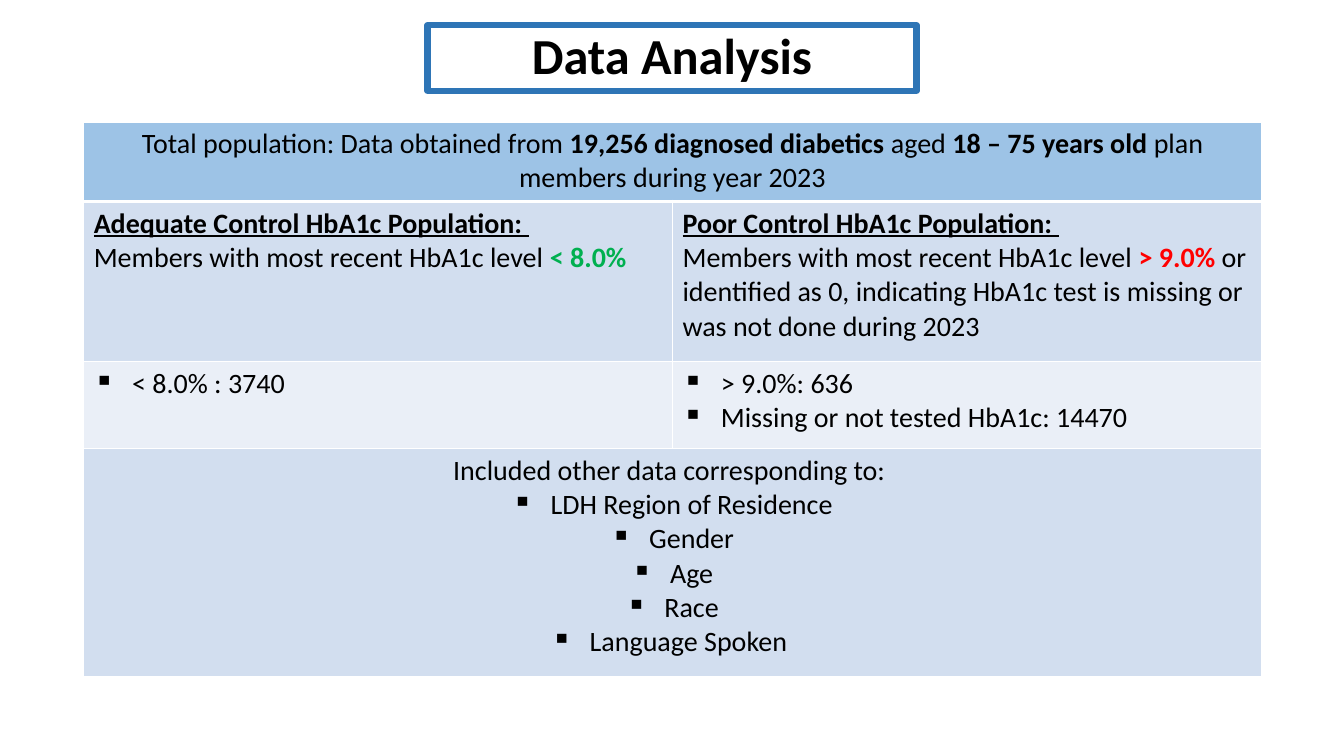
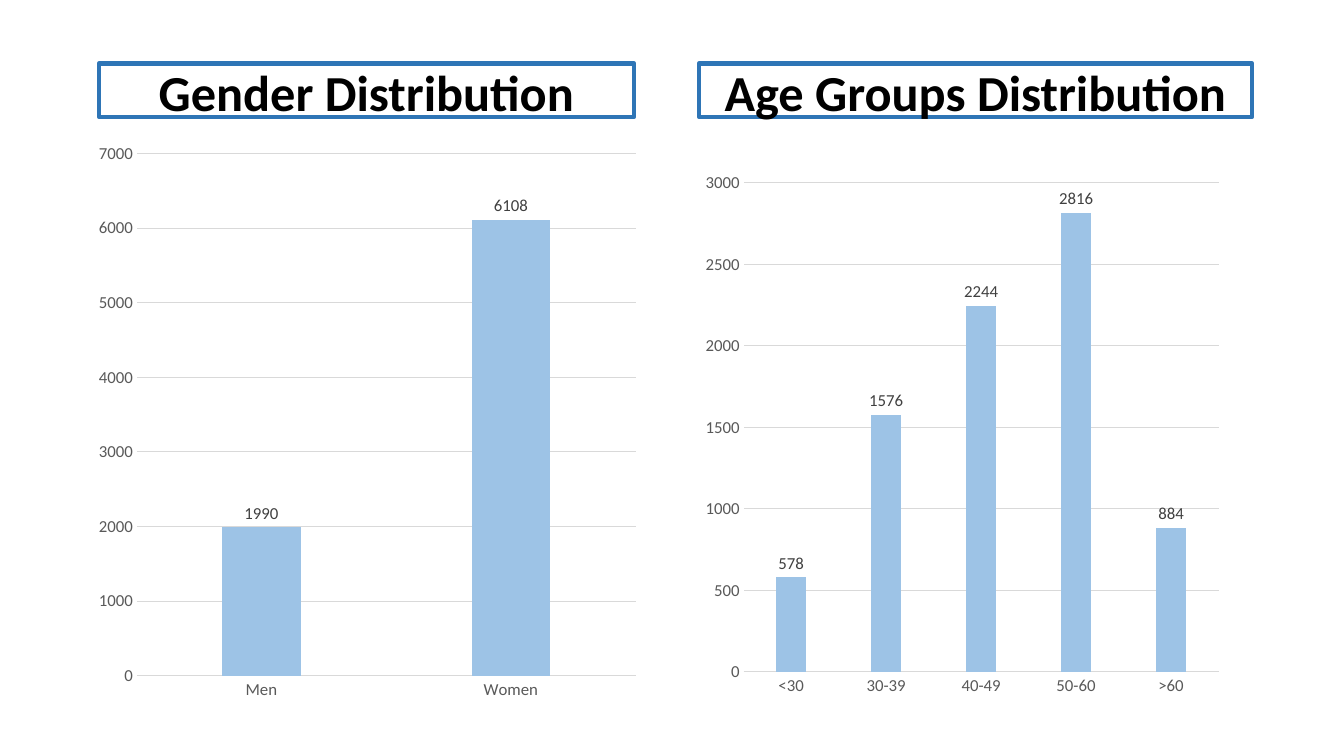
import pptx
import pptx.chart.data
import pptx.dml.color
import pptx.enum.chart
import pptx.enum.shapes
import pptx.enum.text
import pptx.oxml
import pptx.oxml.ns
import pptx.util
from pptx.util import Inches
from lxml import etree

RGB = pptx.dml.color.RGBColor.from_string
Pt = pptx.util.Pt
qn = pptx.oxml.ns.qn
CENTER = pptx.enum.text.PP_ALIGN.CENTER
LEFT = pptx.enum.text.PP_ALIGN.LEFT
TOP = pptx.enum.text.MSO_ANCHOR.TOP
MIDDLE = pptx.enum.text.MSO_ANCHOR.MIDDLE

THEME = {
    "font": "Calibri", "title": 36, "body": 20, "chart": 12,
    "text": "000000", "frame": "2E75B6", "accent": "9DC3E6",
    "band": "D2DEEF", "light": "EAEFF7", "border": "FFFFFF",
    "good": "00B050", "bad": "FF0000",
    "axis": "595959", "label": "404040", "grid": "D9D9D9",
}


def style_font(font, size, color, bold=False, underline=False):
    font.name, font.size = THEME["font"], Pt(size)
    font.color.rgb = RGB(THEME[color])
    font.bold, font.underline = bold, underline


def add_title(slide, text, box, line_width, anchor):
    s = slide.shapes.add_shape(pptx.enum.shapes.MSO_SHAPE.RECTANGLE, *map(Inches, box))
    s.shadow.inherit = False
    s.fill.background()
    s.line.color.rgb = RGB(THEME["frame"])
    s.line.width = Pt(line_width)
    etree.SubElement(s._element.spPr.find(qn("a:ln")), qn("a:round"))
    tf = s.text_frame
    tf.word_wrap, tf.vertical_anchor = True, anchor
    tf.text = text
    p = tf.paragraphs[0]
    p.alignment, p.line_spacing = CENTER, 0.9
    style_font(p.runs[0].font, THEME["title"], "text", bold=True)


prs = pptx.Presentation()
prs.slide_width, prs.slide_height = Inches(13.33), Inches(7.5)
blank = prs.slide_layouts[6]

# Slide 1: data analysis
slide = prs.slides.add_slide(blank)
add_title(slide, "Data Analysis", (4.24, 0.25, 4.85, 0.65), 4.5, MIDDLE)

# Table content: each row has a height, fill, alignment and cells;
# a cell is a list of paragraphs (bulleted, runs), a run is (text, font options)
BOLD = {"bold": True}
HEAD = {"bold": True, "underline": True}
members = "Members with most recent HbA1c level "
rows = [
    (0.79, "accent", CENTER, [[
        (False, [("Total population: Data obtained from ", {}),
                 ("19,256 diagnosed diabetics ", BOLD), ("aged ", {}),
                 ("18 – 75 years old ", BOLD),
                 ("plan members during year 2023", {})])]]),
    (1.59, "band", LEFT, [
        [(False, [("Adequate Control HbA1c Population: ", HEAD)]),
         (False, [(members, {}), ("< 8.0%", {"color": "good", "bold": True})])],
        [(False, [("Poor Control HbA1c Population: ", HEAD)]),
         (False, [(members, {}), ("> 9.0% ", {"color": "bad", "bold": True}),
                  ("or identified as 0, indicating HbA1c test is missing or "
                   "was not done during 2023", {})])]]),
    (0.86, "light", LEFT, [
        [(True, [("< 8.0% : 3740", {})])],
        [(True, [("> 9.0%: 636", {})]),
         (True, [("Missing or not tested HbA1c: 14470", {})])]]),
    (2.26, "band", CENTER, [
        [(False, [("Included other data corresponding to: ", {})])]
        + [(True, [(item, {})]) for item in
           ("LDH Region of Residence", "Gender", "Age", "Race", "Language Spoken ")]]),
]

table = slide.shapes.add_table(len(rows), 2, Inches(0.83), Inches(1.21),
                               Inches(11.68), Inches(5.5)).table
table.first_row = table.horz_banding = False
for col in table.columns:
    col.width = Inches(5.84)

for i, (height, fill, align, cells) in enumerate(rows):
    table.rows[i].height = Inches(height)
    if len(cells) == 1:
        table.cell(i, 0).merge(table.cell(i, 1))

    # Fill and borders, with a heavier rule around the header's lower edge
    for cell in table.rows[i].cells:
        cell.fill.solid()
        cell.fill.fore_color.rgb = RGB(THEME[fill])
        for n, side in enumerate("LRTB"):
            heavy = (i, side) in ((0, "B"), (1, "T"))
            ln = etree.Element(qn("a:ln" + side), w=str(Pt(3 if heavy else 1)))
            paint = etree.SubElement(ln, qn("a:solidFill"))
            etree.SubElement(paint, qn("a:srgbClr"), val=THEME["border"])
            cell._tc.get_or_add_tcPr().insert(n, ln)

    # Text
    for j, paragraphs in enumerate(cells):
        tf = table.cell(i, j).text_frame
        for k, (bulleted, runs) in enumerate(paragraphs):
            p = tf.add_paragraph() if k else tf.paragraphs[0]
            p.alignment = align
            if bulleted:
                pPr = p._p.get_or_add_pPr()
                pPr.set("marL", str(Inches(0.38)))
                pPr.set("indent", str(-Inches(0.38)))
                etree.SubElement(pPr, qn("a:buChar"), char="▪")
            for text, options in runs:
                r = p.add_run()
                r.text = text
                style_font(r.font, THEME["body"], **{"color": "text", **options})

# Slide 2: two column charts with their titles
slide = prs.slides.add_slide(blank)
charts = [
    {"title": "Age Groups Distribution", "title_box": (6.93, 0.63, 5.49, 0.53),
     "box": (6.86, 1.16, 5.49, 6.01), "plot": (0.094, 0.109, 0.858, 0.807),
     "cats": ["<30", "30-39", "40-49", "50-60", ">60"],
     "vals": [578, 1576, 2244, 2816, 884], "max": 3000, "step": 500},
    {"title": "Gender Distribution", "title_box": (0.98, 0.63, 5.31, 0.53),
     "box": (0.8, 1.42, 5.68, 5.75), "plot": (0.098, 0.018, 0.871, 0.901),
     "cats": ["Men", "Women"],
     "vals": [1990, 6108], "max": 7000, "step": 1000},
]

for spec_chart in charts:
    data = pptx.chart.data.CategoryChartData()
    data.categories = spec_chart["cats"]
    data.add_series("Series 1", spec_chart["vals"])
    chart = slide.shapes.add_chart(pptx.enum.chart.XL_CHART_TYPE.COLUMN_CLUSTERED,
                                   *map(Inches, spec_chart["box"]), data).chart
    chart.has_legend = chart.has_title = False
    style_font(chart.font, THEME["chart"], "text")

    # Columns and value labels
    plot = chart.plots[0]
    plot.gap_width, plot.vary_by_categories = 219, False
    fill = plot.series[0].format.fill
    fill.solid()
    fill.fore_color.rgb = RGB(THEME["accent"])
    plot.has_data_labels = True
    labels = plot.data_labels
    labels.show_value = True
    labels.position = pptx.enum.chart.XL_LABEL_POSITION.OUTSIDE_END
    style_font(labels.font, THEME["chart"], "label")

    # Axes and gridlines
    cat_axis, val_axis = chart.category_axis, chart.value_axis
    for axis in (cat_axis, val_axis):
        axis.major_tick_mark = axis.minor_tick_mark = pptx.enum.chart.XL_TICK_MARK.NONE
        style_font(axis.tick_labels.font, THEME["chart"], "axis")
    val_axis.minimum_scale, val_axis.maximum_scale = 0, spec_chart["max"]
    val_axis.major_unit = spec_chart["step"]
    val_axis.format.line.fill.background()
    val_axis.has_major_gridlines = True
    for line in (cat_axis.format.line, val_axis.major_gridlines.format.line):
        line.color.rgb = RGB(THEME["grid"])
        line.width = Pt(0.75)

    # Fixed inner plot area, as fractions of the chart
    area = chart._chartSpace.find(".//" + qn("c:plotArea"))
    for old in area.findall(qn("c:layout")):
        area.remove(old)
    layout = etree.Element(qn("c:layout"))
    manual = etree.SubElement(layout, qn("c:manualLayout"))
    settings = [("layoutTarget", "inner"), ("xMode", "edge"), ("yMode", "edge")]
    for tag, val in settings + list(zip("xywh", spec_chart["plot"])):
        etree.SubElement(manual, qn("c:" + tag), val=str(val))
    area.insert(0, layout)

    add_title(slide, spec_chart["title"], spec_chart["title_box"], 3, TOP)

prs.save("out.pptx")
